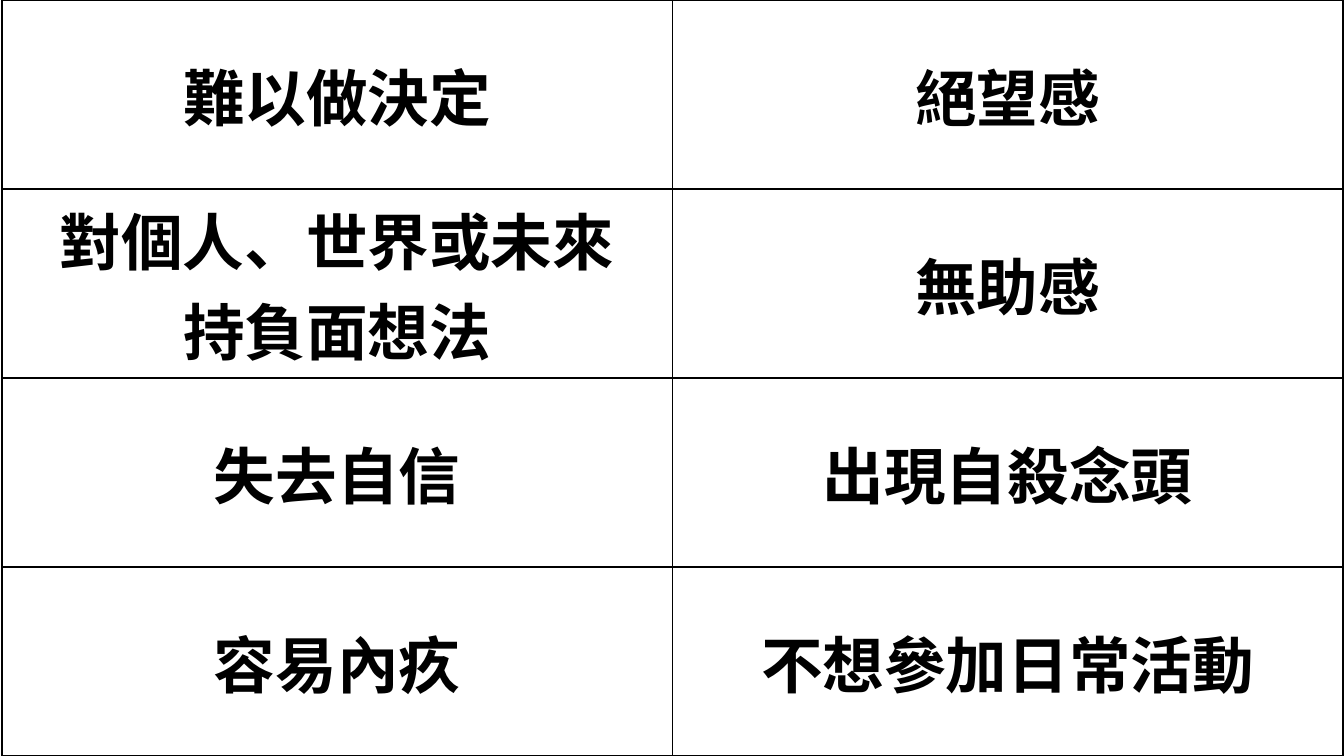
from dataclasses import dataclass

import lxml.etree
import pptx
import pptx.dml.color
import pptx.enum.text
import pptx.oxml
import pptx.oxml.ns
import pptx.util


@dataclass(frozen=True)
class Theme:
    font: str = "Noto Sans CJK TC"
    ink: str = "000000"
    paper: str = "FFFFFF"
    size: int = 44
    line: int = 1


THEME = Theme()
WIDE, HIGH = 13.33, 7.5
SIGNS = [
    ["難以做決定", "絕望感"],
    ["對個人、世界或未來\n持負面想法", "無助感"],
    ["失去自信", "出現自殺念頭"],
    ["容易內疚", "不想參加日常活動"],
]


def color(code):
    return pptx.dml.color.RGBColor.from_string(code)


def write(frame, text, size=THEME.size, ink=THEME.ink, bold=True,
          align=pptx.enum.text.PP_ALIGN.CENTER):
    """Fill a text frame, one paragraph for each line of text."""
    frame.text = text
    for para in frame.paragraphs:
        para.alignment = align
        for run in para.runs:
            run.font.name = THEME.font
            run.font.size = pptx.util.Pt(size)
            run.font.bold = bold
            run.font.color.rgb = color(ink)
            east = lxml.etree.SubElement(run.font._element, pptx.oxml.ns.qn("a:ea"))
            east.set("typeface", THEME.font)


def border(cell):
    """Draw all four sides; the lines must come before the cell's fill."""
    props = cell._tc.get_or_add_tcPr()
    for spot, side in enumerate("LRTB"):
        props.insert(spot, pptx.oxml.parse_xml(
            f'<a:ln{side} {pptx.oxml.ns.nsdecls("a")} w="{pptx.util.Pt(THEME.line)}">'
            f'<a:solidFill><a:srgbClr val="{THEME.ink}"/></a:solidFill></a:ln{side}>'))


def grid(slide, rows, left, top, width, height):
    """Place a table of equal cells in the given box, in inches."""
    box = map(pptx.util.Inches, (left, top, width, height))
    table = slide.shapes.add_table(len(rows), len(rows[0]), *box).table
    table.first_row = table.horz_banding = False
    for y, row in enumerate(rows):
        for x, text in enumerate(row):
            cell = table.cell(y, x)
            cell.vertical_anchor = pptx.enum.text.MSO_ANCHOR.MIDDLE
            cell.fill.solid()
            cell.fill.fore_color.rgb = color(THEME.paper)
            border(cell)
            write(cell.text_frame, text)


def main():
    deck = pptx.Presentation()
    deck.slide_width = pptx.util.Inches(WIDE)
    deck.slide_height = pptx.util.Inches(HIGH)
    blank = deck.slide_layouts.get_by_name("Blank")
    slide = deck.slides.add_slide(blank)
    grid(slide, SIGNS, left=0.02, top=0, width=13.3, height=HIGH)
    deck.save("out.pptx")


if __name__ == "__main__":
    main()
